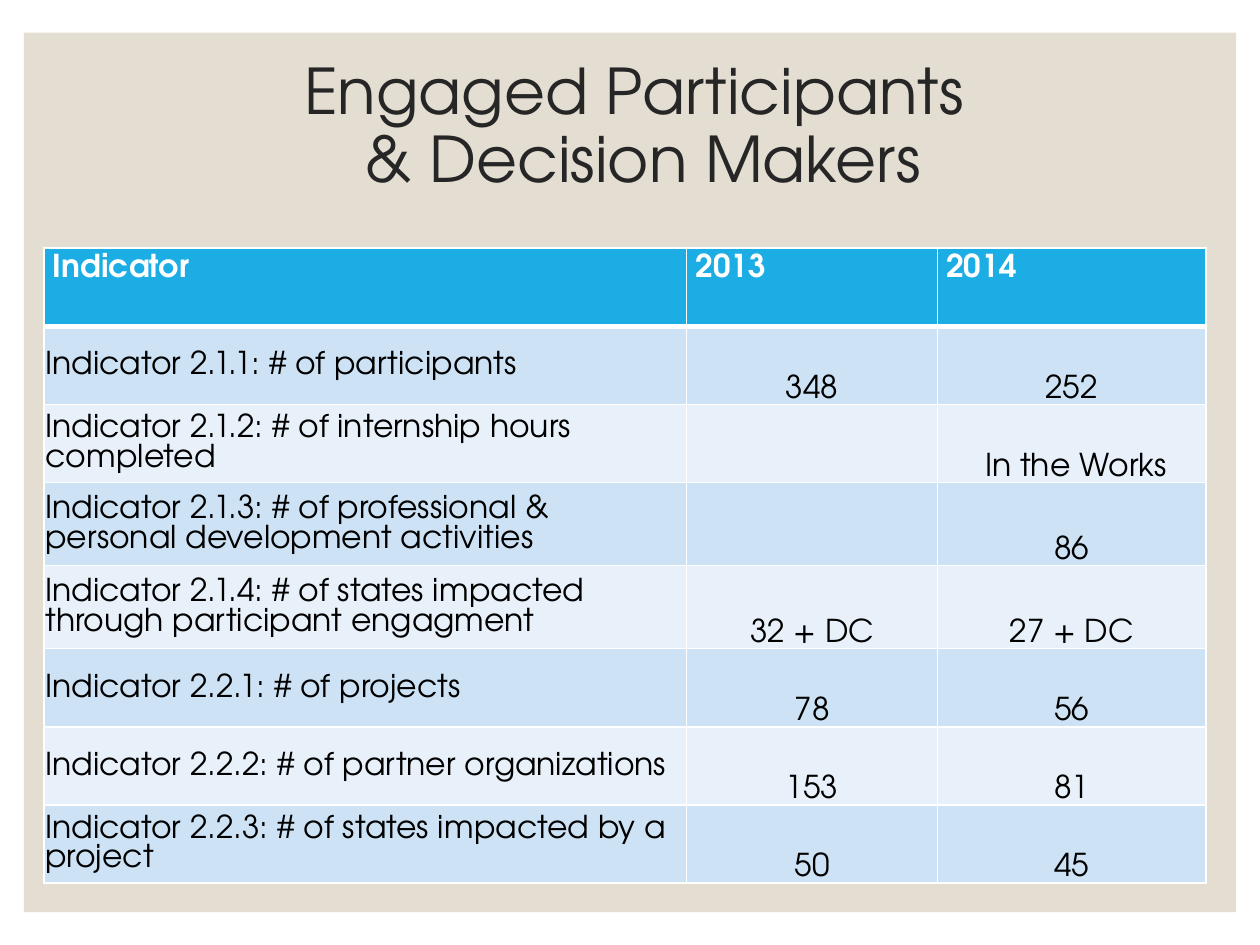
from lxml import etree
from pptx import Presentation
from pptx.dml.color import RGBColor
from pptx.enum.shapes import MSO_SHAPE
from pptx.enum.text import MSO_ANCHOR, PP_ALIGN
from pptx.oxml.ns import qn
from pptx.util import Inches, Pt

RECT = MSO_SHAPE.RECTANGLE
TOP, MIDDLE, BOTTOM = MSO_ANCHOR.TOP, MSO_ANCHOR.MIDDLE, MSO_ANCHOR.BOTTOM
LEFT, CENTER = PP_ALIGN.LEFT, PP_ALIGN.CENTER
FONT = "TeX Gyre Adventor"
COLORS = {
    "panel": "E3DED1", "title": "262626", "head": "1CADE4", "odd": "CDE3F5",
    "even": "E8F1FA", "white": "FFFFFF", "black": "000000",
}
ROWS = [
    ("Indicator", "2013", "2014"),
    ("Indicator 2.1.1: # of participants", "348", "252"),
    ("Indicator 2.1.2: # of internship hours completed", "", "\u00a0In the Works".replace("\u00a0", " ")),
    ("Indicator 2.1.3: # of professional & personal development activities", "", "86"),
    ("Indicator 2.1.4: # of states impacted through participant engagment", "32 + DC", "27 + DC"),
    ("Indicator 2.2.1: # of projects", "78", "56"),
    ("Indicator 2.2.2: # of partner organizations", "153", "81"),
    ("Indicator 2.2.3: # of states impacted by a project", "50", "45"),
]
WIDTHS = [5.1, 1.99, 2.13]
HEIGHTS = [0.62, 0.62, 0.62, 0.66, 0.66, 0.62, 0.62, 0.62]


class Deck:
    def __init__(self, slide):
        self.slide = slide

    def color(self, name):
        return RGBColor.from_string(COLORS[name])

    def style(self, para, size, color, align, bold=False):
        para.alignment = align
        font = para.font
        font.name, font.size, font.bold = FONT, Pt(size), bold
        font.color.rgb = self.color(color)

    def panel(self, *box):
        shape = self.slide.shapes.add_shape(RECT, *map(Inches, box))
        shape.shadow.inherit = False
        shape.fill.solid()
        shape.fill.fore_color.rgb = self.color("panel")
        shape.line.fill.background()

    def title(self, lines, *box):
        frame = self.slide.shapes.add_textbox(*map(Inches, box)).text_frame
        frame.word_wrap = True
        frame.vertical_anchor = MIDDLE
        frame.text = "\n".join(lines)
        for para in frame.paragraphs:
            self.style(para, 36, "title", CENTER)
            para.line_spacing = 0.9

    def border(self, cell, base):
        """Draw white lines on all sides, the bottom one base points wide."""
        props = cell._tc.get_or_add_tcPr()
        sides = {"lnL": 1, "lnR": 1, "lnT": 1, "lnB": base}
        for spot, (tag, width) in enumerate(sides.items()):
            line = etree.Element(qn(f"a:{tag}"), w=str(Pt(width)))
            fill = etree.SubElement(line, qn("a:solidFill"))
            etree.SubElement(fill, qn("a:srgbClr"), val=COLORS["white"])
            props.insert(spot, line)

    def cell(self, cell, text, row, col):
        head = row == 0
        cell.text = text
        cell.fill.solid()
        fill = "head" if head else "odd" if row % 2 else "even"
        cell.fill.fore_color.rgb = self.color(fill)
        side, top, base = (0.07, 0.05, 0.05) if head else (0.01, 0.01, 0)
        cell.margin_left = cell.margin_right = Inches(side)
        cell.margin_top, cell.margin_bottom = Inches(top), Inches(base)
        cell.vertical_anchor = TOP if head else BOTTOM if col else MIDDLE
        self.style(cell.text_frame.paragraphs[0], 18, "white" if head else "black",
                   CENTER if col and not head else LEFT, head)
        self.border(cell, 3 if head else 1)

    def table(self, rows, left, top):
        size = left, top, sum(WIDTHS), sum(HEIGHTS)
        grid = self.slide.shapes.add_table(len(rows), len(WIDTHS), *map(Inches, size)).table
        for col, width in zip(grid.columns, WIDTHS):
            col.width = Inches(width)
        for row, height in zip(grid.rows, HEIGHTS):
            row.height = Inches(height)
        for y, row in enumerate(rows):
            for x, text in enumerate(row):
                self.cell(grid.cell(y, x), text, y, x)


def main():
    prs = Presentation()
    prs.slide_width, prs.slide_height = Inches(10), Inches(7.5)
    deck = Deck(prs.slides.add_slide(prs.slide_layouts[6]))
    deck.panel(0.19, 0.26, 9.62, 6.98)
    deck.table(ROWS, 0.35, 1.97)
    deck.title(["Engaged Participants ", "& Decision Makers"], 0.84, 0.46, 8.52, 1.11)
    prs.save("out.pptx")


if __name__ == "__main__":
    main()
